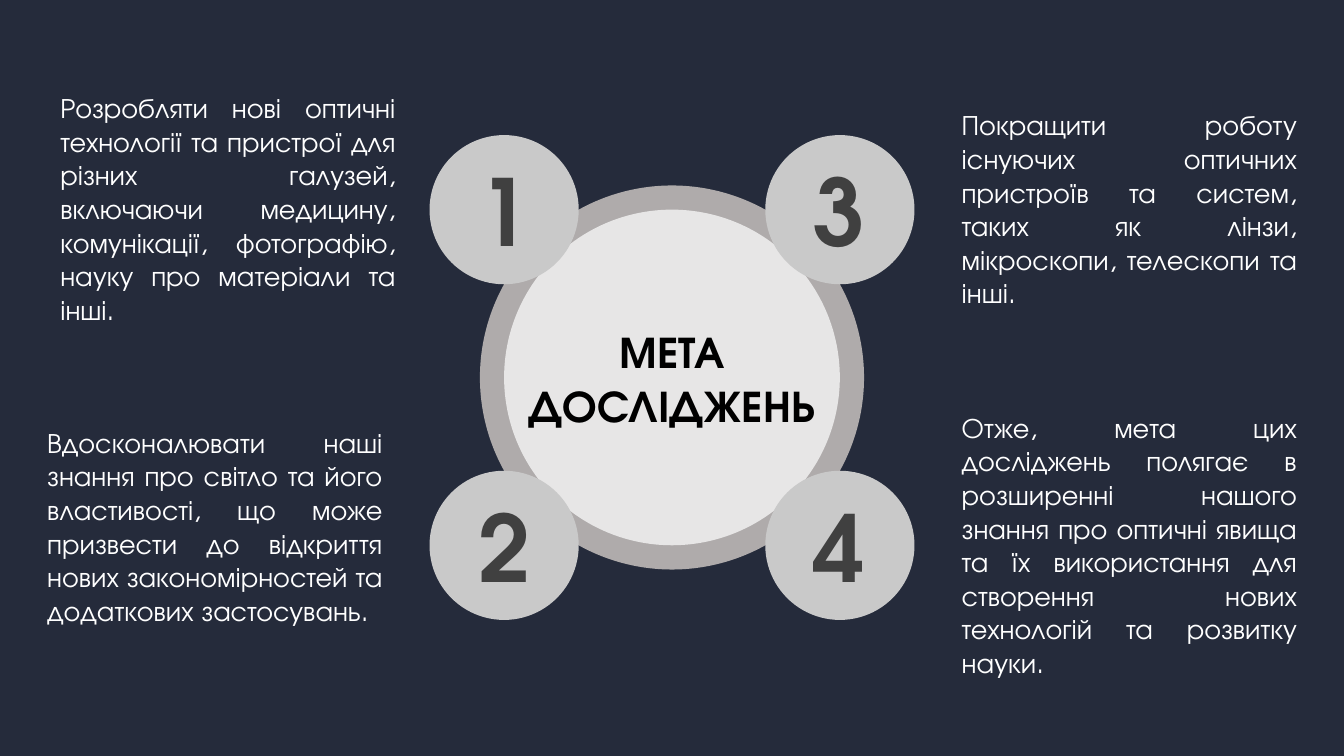
from pptx import Presentation
from pptx.dml.color import RGBColor
from pptx.enum.shapes import MSO_SHAPE
from pptx.enum.text import MSO_ANCHOR, MSO_AUTO_SIZE, PP_ALIGN
from pptx.util import Inches, Pt

FONT = "TeX Gyre Adventor"
NAVY = RGBColor(0x25, 0x2B, 0x3B)
RING = RGBColor(0xAF, 0xAB, 0xAB)
DISC = RGBColor(0xE7, 0xE6, 0xE6)
BADGE = RGBColor(0xC9, 0xC9, 0xC9)
GRAY = RGBColor(0x40, 0x40, 0x40)
BLACK = RGBColor(0, 0, 0)
WHITE = RGBColor(0xFF, 0xFF, 0xFF)

TITLE_FORMAT = {"name": FONT, "size": Pt(32), "bold": True}
NUMBER_FORMAT = {"name": FONT, "size": Pt(66), "bold": True}
BODY_FORMAT = {"name": FONT, "size": Pt(20), "bold": False}

TITLE_LINES = ["МЕТА", "ДОСЛІДЖЕНЬ"]
# Left, top, height and wording of each goal
GOALS = [
    (0.5, 0.85, 2.46, "Розробляти нові оптичні технології та пристрої для різних "
     "галузей, включаючи медицину, комунікації, фотографію, науку про матеріали та інші."),
    (0.37, 4.17, 2.79, "Вдосконалювати наші знання про світло та його властивості, що "
     "може призвести до відкриття нових закономірностей та додаткових застосувань."),
    (9.44, 1.02, 2.12, "Покращити роботу існуючих оптичних пристроїв та систем, таких "
     "як лінзи, мікроскопи, телескопи та інші."),
    (9.44, 4.02, 3.13, "Отже, мета цих досліджень полягає в розширенні нашого знання "
     "про оптичні явища та їх використання для створення нових технологій та розвитку "
     "науки."),
]


def write(tf, lines, align, color, font_format):
    for i, line in enumerate(lines):
        p = tf.paragraphs[0] if i == 0 else tf.add_paragraph()
        p.alignment = align
        r = p.add_run()
        r.text = line
        r.font.color.rgb = color
        for key, value in font_format.items():
            setattr(r.font, key, value)


def add_filled(slide, kind, left, top, width, height, color):
    sp = slide.shapes.add_shape(kind, Inches(left), Inches(top), Inches(width), Inches(height))
    sp.shadow.inherit = False
    sp.fill.solid()
    sp.fill.fore_color.rgb = color
    sp.line.fill.background()
    return sp


def add_circle(slide, cx, cy, size, color):
    return add_filled(slide, MSO_SHAPE.OVAL, cx - size / 2, cy - size / 2, size, size, color)


def add_backdrop(slide, width, height):
    sp = add_filled(slide, MSO_SHAPE.RECTANGLE, 0, 0, width, height, NAVY)
    sp.line.color.rgb = NAVY
    sp.line.width = Pt(1)


def add_hub(slide, left, top, size):
    """Ring and disc, with numbered badges on the corners of the disc's square."""
    cx, cy = left + size / 2, top + size / 2
    add_circle(slide, cx, cy, size + 0.48, RING)
    add_circle(slide, cx, cy, size, DISC)
    for i in range(4):
        column, row = divmod(i, 2)
        sp = add_circle(slide, left + column * size, top + row * size, 1.48, BADGE)
        sp.text_frame.vertical_anchor = MSO_ANCHOR.MIDDLE
        write(sp.text_frame, [str(i + 1)], PP_ALIGN.CENTER, GRAY, NUMBER_FORMAT)


def add_title(slide, left, top, width, height):
    title = slide.shapes.title
    title.left, title.top = Inches(left), Inches(top)
    title.width, title.height = Inches(width), Inches(height)
    tf = title.text_frame
    tf.word_wrap = False
    tf.auto_size = MSO_AUTO_SIZE.NONE
    tf.vertical_anchor = MSO_ANCHOR.TOP
    write(tf, TITLE_LINES, PP_ALIGN.CENTER, BLACK, TITLE_FORMAT)
    # Bring the title in front of the disc
    title.element.getparent().append(title.element)


def add_goal(slide, left, top, width, height, text):
    box = slide.shapes.add_textbox(Inches(left), Inches(top), Inches(width), Inches(height))
    tf = box.text_frame
    tf.word_wrap = True
    tf.auto_size = MSO_AUTO_SIZE.SHAPE_TO_FIT_TEXT
    write(tf, [text], PP_ALIGN.JUSTIFY, WHITE, BODY_FORMAT)


def build_goals_slide(prs):
    slide = prs.slides.add_slide(prs.slide_layouts[5])
    add_backdrop(slide, 13.33, 7.5)
    add_hub(slide, 5, 2.08, 3.33)
    add_title(slide, 5.03, 3.16, 3.27, 1.18)
    for left, top, height, text in GOALS:
        add_goal(slide, left, top, 3.52, height, text)


def main():
    prs = Presentation()
    prs.slide_width, prs.slide_height = Inches(13.33), Inches(7.5)
    build_goals_slide(prs)
    prs.save("out.pptx")


if __name__ == "__main__":
    main()
